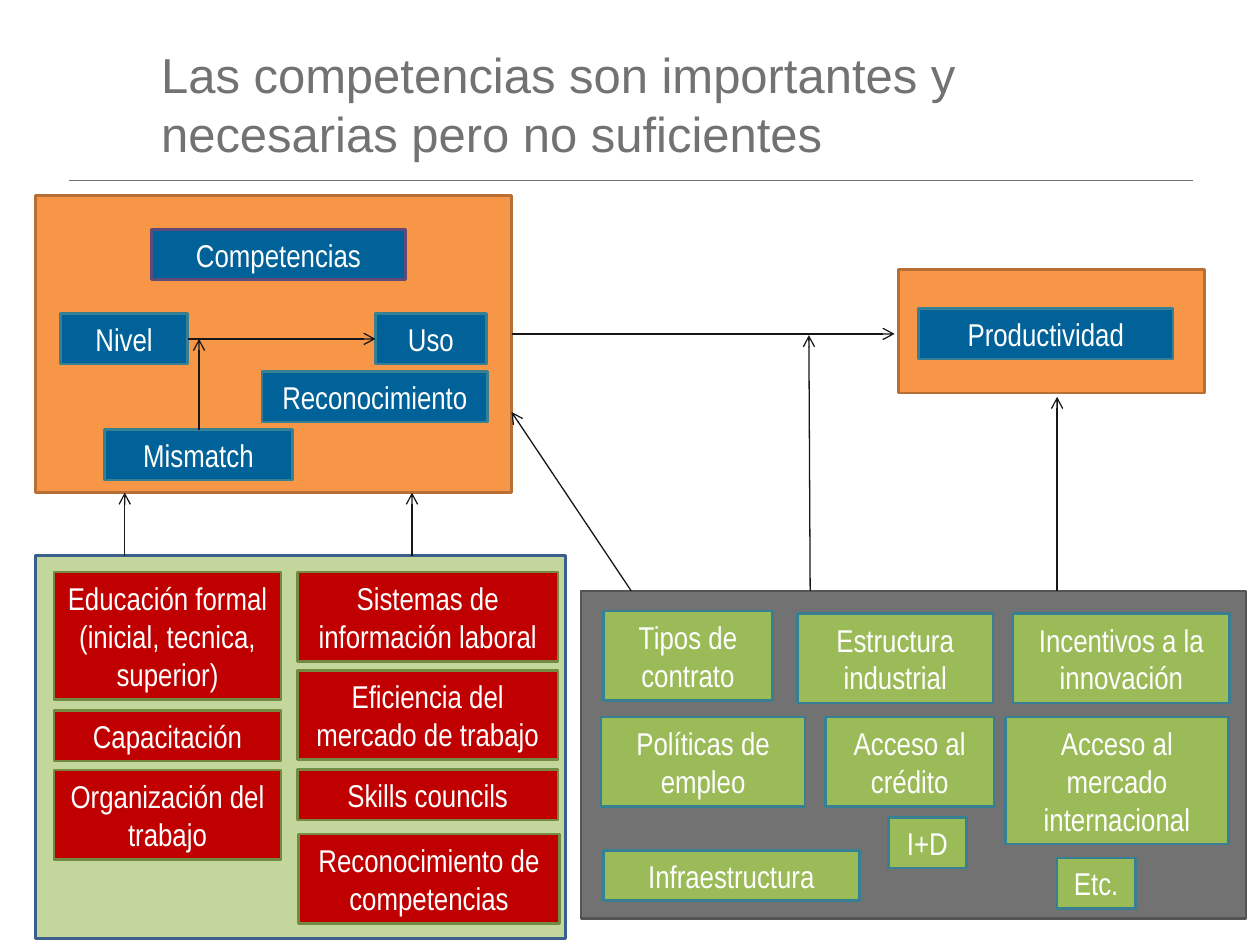
from collections import namedtuple

from lxml.etree import SubElement
from pptx import Presentation
from pptx.dml.color import RGBColor
from pptx.enum.shapes import MSO_CONNECTOR as Connector, MSO_SHAPE as Shape
from pptx.enum.text import MSO_ANCHOR as Anchor, PP_ALIGN as Align
from pptx.oxml.ns import qn
from pptx.util import Inches, Pt

# The slide is a grid of 100 columns by 75 rows
COLUMNS, ROWS = 100, 75
LABEL_HEIGHTS = {1: 4, 2: 7.1, 3: 10.1}  # rows taken by a label, by text lines
ORANGE, ORANGE_EDGE = "F79646", "B76F34"
BLUE, TEAL, PURPLE = "006299", "377F92", "5F4A78"
RED, OLIVE = "C00000", "738A42"
GREEN, PALE_GREEN, NAVY = "9BBB59", "C3D69B", "3A5F8C"
GRAY, DARK_GRAY, INK, WHITE = "727272", "545454", "171717", "FFFFFF"

Box = namedtuple("Box", "left top width height")

deck = Presentation()
deck.slide_width, deck.slide_height = Inches(10), Inches(7.5)
page = deck.slides.add_slide(deck.slide_layouts[6])


def color(value):
    return RGBColor.from_string(value)


def across(columns):
    return round(deck.slide_width * columns / COLUMNS)


def down(rows):
    return round(deck.slide_height * rows / ROWS)


def emu(box):
    return across(box.left), down(box.top), across(box.width), down(box.height)


def right(box):
    return box.left + box.width


def bottom(box):
    return box.top + box.height


def style_text(frame, text, size, font, ink, align):
    frame.word_wrap = True
    frame.vertical_anchor = Anchor.MIDDLE
    frame.text = text
    para = frame.paragraphs[0]
    para.alignment = align
    span = para.runs[0]
    span.font.size, span.font.name = Pt(size), font
    span.font.color.rgb = color(ink)


def add_block(box, fill, edge):
    block = page.shapes.add_shape(Shape.RECTANGLE, *emu(box))
    block.shadow.inherit = False
    block.fill.solid()
    block.fill.fore_color.rgb = color(fill)
    block.line.color.rgb = color(edge)
    block.line.width = Pt(1.5)
    return block


def add_labels(panel, labels, fill, edge):
    """Each label: text, column and row inside the panel, width, text lines."""
    for text, column, row, width, lines in labels:
        box = Box(panel.left + column, panel.top + row, width, LABEL_HEIGHTS[lines])
        block = add_block(box, fill, edge)
        style_text(block.text_frame, text, 18, "Arial Narrow", WHITE, Align.CENTER)


def add_line(start, end, ink=INK, weight=0.75, arrow=True):
    line = page.shapes.add_connector(
        Connector.STRAIGHT, across(start[0]), down(start[1]), across(end[0]), down(end[1]))
    line.line.color.rgb = color(ink)
    line.line.width = Pt(weight)
    if arrow:
        SubElement(line.line._get_or_add_ln(), qn("a:tailEnd"), type="arrow")
    SubElement(line._element.spPr, qn("a:effectLst"))


def draw_title(box):
    title = page.shapes.add_textbox(*emu(box))
    style_text(title.text_frame,
               "Las competencias son importantes y necesarias pero no suficientes",
               28, "Arial", GRAY, Align.LEFT)
    rule = bottom(box) + 0.5
    add_line((5.5, rule), (94.7, rule), GRAY, 0.5, arrow=False)


def draw_productivity(panel):
    add_block(panel, ORANGE, ORANGE_EDGE)
    add_labels(panel, [("Productividad", 1.6, 3.1, 20.2, 1)], BLUE, TEAL)


def draw_factors(panel):
    add_block(panel, GRAY, DARK_GRAY)
    add_labels(panel, [
        ("Tipos de contrato", 1.8, 1.6, 13.4, 2),
        ("Estructura industrial", 17.2, 1.8, 15.5, 2),
        ("Incentivos a la innovación", 34.3, 1.8, 17.2, 2),
        ("Políticas de empleo", 1.6, 10, 16.2, 2),
        ("Acceso al crédito", 19.4, 10, 13.4, 2),
        ("Acceso al mercado internacional", 33.7, 10, 17.7, 3),
        ("Infraestructura", 1.8, 20.6, 20.3, 1),
        ("I+D", 24.4, 18, 6.2, 1),
        ("Etc.", 37.8, 21.2, 6.2, 1),
    ], GREEN, TEAL)


def draw_skills(panel):
    add_block(panel, ORANGE, ORANGE_EDGE)
    add_labels(panel, [("Competencias", 9.2, 2.7, 20.2, 1)], BLUE, PURPLE)
    add_labels(panel, [
        ("Nivel", 2, 9.4, 10.1, 1),
        ("Uso", 27, 9.4, 8.8, 1),
        ("Mismatch", 5.5, 18.6, 14.9, 1),
        ("Reconocimiento", 18, 14, 17.9, 1),
    ], BLUE, TEAL)
    # Level leads to use, and mismatch acts on that link
    middle, mismatch = panel.top + 11.4, panel.left + 13
    add_line((panel.left + 12.1, middle), (panel.left + 27, middle))
    add_line((mismatch, panel.top + 18.6), (mismatch, middle))


def draw_training(panel):
    add_block(panel, PALE_GREEN, NAVY)
    add_labels(panel, [
        ("Educación formal (inicial, tecnica, superior)", 1.5, 1.3, 18, 3),
        ("Capacitación", 1.5, 12.3, 18, 1),
        ("Organización del trabajo", 1.5, 17, 18, 2),
        ("Sistemas de información laboral", 20.8, 1.3, 20.7, 2),
        ("Eficiencia del mercado de trabajo", 20.8, 9.1, 20.7, 2),
        ("Skills councils", 20.8, 17, 20.7, 1),
        ("Reconocimiento de competencias", 20.9, 22.1, 20.7, 2),
    ], RED, OLIVE)


def draw_links(skills, productivity, training, factors):
    level = skills.top + 11
    add_line((right(skills), level), (productivity.left - 0.3, level))
    # Training raises skills
    for column in (9.9, 32.7):
        add_line((column, training.top), (column, bottom(skills)))
    # Other factors act on skills, on the link and on productivity
    add_line((50.1, factors.top), (right(skills), 32.7))
    add_line((64.3, factors.top), (64.2, level + 0.1))
    add_line((83.9, factors.top), (83.9, bottom(productivity) + 0.3))


skills_box = Box(2.8, 15.5, 37.8, 23.6)
productivity_box = Box(71.3, 21.4, 24.3, 9.8)
training_box = Box(2.8, 44.1, 42.1, 30.4)
factors_box = Box(46.1, 46.9, 52.8, 26)

draw_title(Box(11.8, 2.6, 81.1, 11.2))
draw_productivity(productivity_box)
draw_factors(factors_box)
draw_skills(skills_box)
draw_training(training_box)
draw_links(skills_box, productivity_box, training_box, factors_box)
deck.save("out.pptx")
